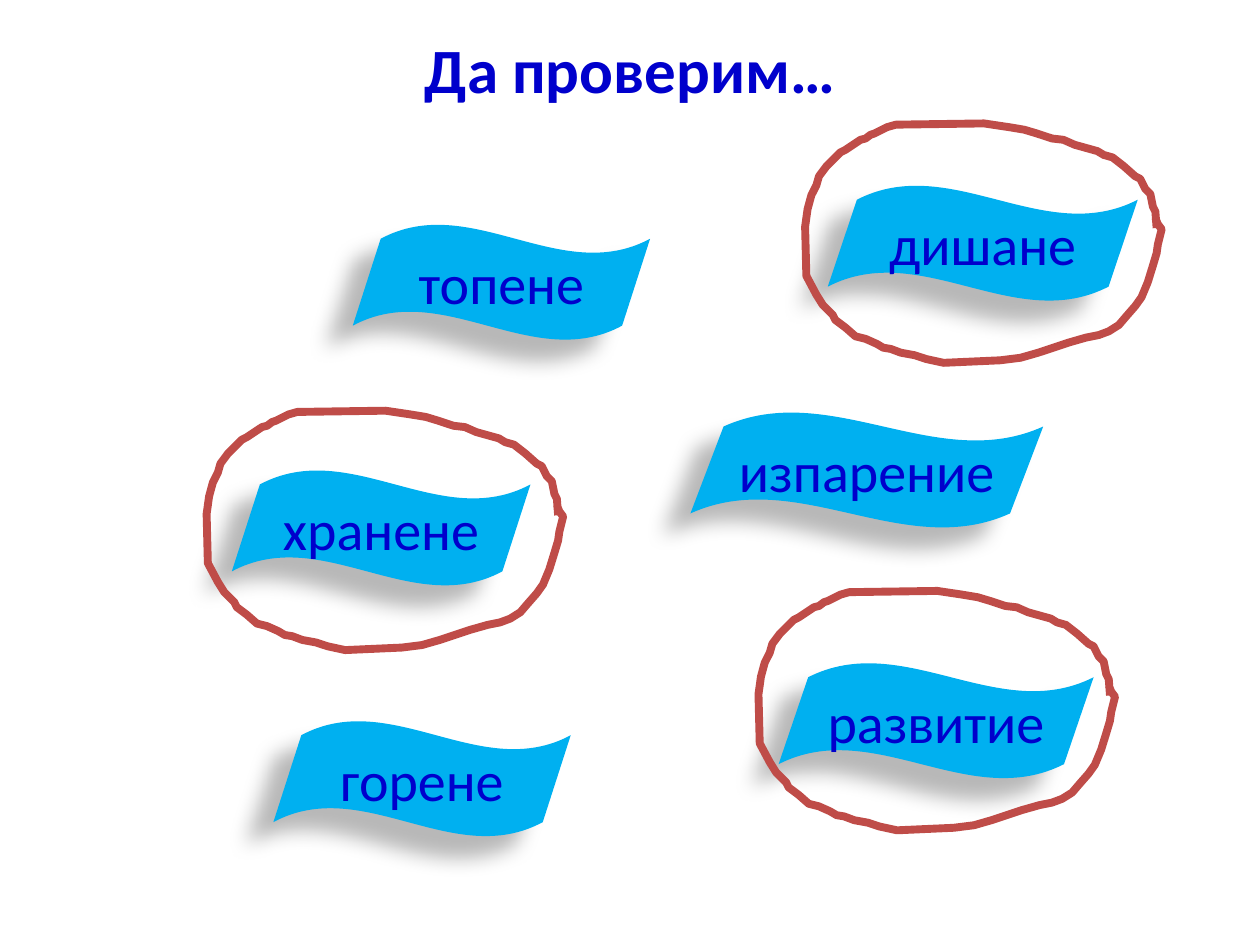
from lxml.etree import fromstring
from pptx import Presentation
from pptx.dml.color import RGBColor
from pptx.enum.shapes import MSO_SHAPE
from pptx.enum.text import MSO_ANCHOR, PP_ALIGN
from pptx.util import Inches, Pt

# Content: word, left, top, width of each wave
TITLE = "Да проверим…"
WAVES = [
    ("хранене", 1.84, 3.73, 2.37),
    ("дишане", 6.57, 1.47, 2.46),
    ("развитие", 6.18, 5.26, 2.5),
    ("горене", 2.17, 5.72, 2.36),
    ("топене", 2.8, 1.78, 2.36),
    ("изпарение", 5.48, 3.27, 2.8),
]
HIGH = 0.92

# Left and top of each hand-drawn ring, and the outline they share
RINGS = [(1.64, 3.26), (6.02, 4.69), (6.39, 0.98)]
LOOP = [
    (2.79, 0.83), (2.78, 0.7), (2.76, 0.66), (2.74, 0.56), (2.7, 0.52),
    (2.66, 0.44), (2.62, 0.42), (2.53, 0.34), (2.44, 0.27), (2.37, 0.25),
    (2.32, 0.22), (2.14, 0.17), (2.05, 0.13), (1.96, 0.12), (1.84, 0.08),
    (1.74, 0.05), (1.62, 0.03), (1.42, 0), (0.72, 0.01), (0.65, 0.03),
    (0.61, 0.05), (0.55, 0.08), (0.52, 0.09), (0.48, 0.12), (0.44, 0.13),
    (0.32, 0.21), (0.28, 0.23), (0.17, 0.34), (0.11, 0.42), (0.09, 0.49),
    (0.05, 0.57), (0.02, 0.68), (0, 0.82), (0.01, 1.21), (0.09, 1.36),
    (0.14, 1.44), (0.22, 1.52), (0.24, 1.56), (0.32, 1.62), (0.4, 1.69),
    (0.48, 1.71), (0.57, 1.75), (0.62, 1.78), (0.68, 1.79), (0.76, 1.82),
    (0.87, 1.84), (0.96, 1.87), (1.1, 1.9), (1.55, 1.88), (1.71, 1.86),
    (1.85, 1.82), (1.97, 1.78), (2.09, 1.74), (2.23, 1.7), (2.33, 1.68),
    (2.41, 1.65), (2.49, 1.6), (2.55, 1.53), (2.62, 1.45), (2.67, 1.38),
    (2.72, 1.26), (2.76, 1.13), (2.79, 1.03), (2.8, 0.96), (2.83, 0.84),
    (2.8, 0.8), (2.78, 0.75),
]

# Formats
BLUE, SKY, RED = "0000CC", "00B0F0", "BF4C48"
HEAD = {"name": "Calibri", "size": Pt(36), "bold": True}
WORD = {"name": "Calibri", "size": Pt(32), "bold": False}
SHADE = (
    '<a:effectLst xmlns:a="http://schemas.openxmlformats.org/drawingml/2006/main">'
    f'<a:outerShdw blurRad="{Pt(11.8)}" dist="{Pt(19.7)}" dir="{141 * 60000}" '
    'algn="ctr" rotWithShape="0"><a:srgbClr val="000000"><a:alpha val="28000"/>'
    "</a:srgbClr></a:outerShdw></a:effectLst>"
)


def tint(color, code):
    color.rgb = RGBColor.from_string(code)


def write(shape, text, form):
    frame = shape.text_frame
    frame.text = text
    frame.word_wrap = False
    frame.vertical_anchor = MSO_ANCHOR.MIDDLE
    para = frame.paragraphs[0]
    para.alignment = PP_ALIGN.CENTER
    for key, value in form.items():
        setattr(para.font, key, value)
    tint(para.font.color, BLUE)


def add_wave(shapes, text, left, top, width):
    wave = shapes.add_shape(MSO_SHAPE.WAVE, Inches(left), Inches(top),
                            Inches(width), Inches(HIGH))
    wave.adjustments[0] = 0.125
    wave.adjustments[1] = -0.047
    wave.fill.solid()
    tint(wave.fill.fore_color, SKY)
    wave.line.fill.background()
    wave._element.spPr.append(fromstring(SHADE))
    write(wave, text, WORD)


def add_ring(shapes, left, top):
    spots = [(Inches(left + x), Inches(top + y)) for x, y in LOOP]
    pen = shapes.build_freeform(*spots[0])
    pen.add_line_segments(spots[1:], close=False)
    ring = pen.convert_to_shape()
    ring.shadow.inherit = False
    ring.fill.background()
    tint(ring.line.color, RED)
    ring.line.width = Pt(4.5)


def main():
    deck = Presentation()
    deck.slide_width, deck.slide_height = Inches(10), Inches(7.5)
    shapes = deck.slides.add_slide(deck.slide_layouts[5]).shapes

    # Title
    title = shapes.title
    title.left, title.top = Inches(0.17), Inches(0.13)
    title.width, title.height = Inches(9.66), Inches(0.83)
    write(title, TITLE, HEAD)

    # Words, then the rings around the right answers
    for item in WAVES:
        add_wave(shapes, *item)
    for spot in RINGS:
        add_ring(shapes, *spot)

    deck.save("out.pptx")


if __name__ == "__main__":
    main()
